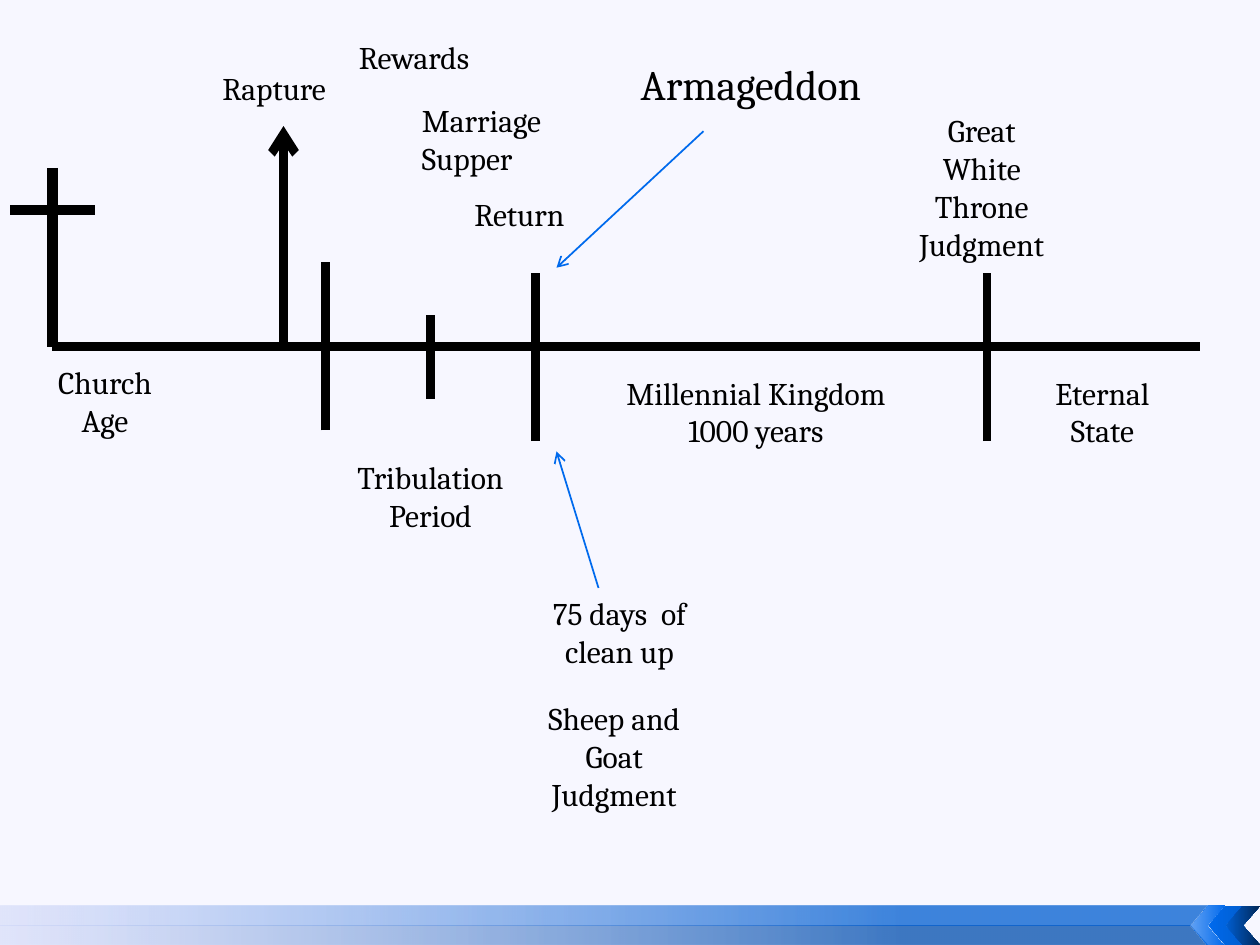
from dataclasses import dataclass
from pptx import Presentation
from pptx.dml.color import RGBColor
from pptx.enum.shapes import MSO_CONNECTOR, MSO_SHAPE
from pptx.enum.text import MSO_AUTO_SIZE, PP_ALIGN
from pptx.oxml import parse_xml
from pptx.oxml.ns import nsdecls, qn
from pptx.oxml.xmlchemy import OxmlElement
from pptx.util import Inches, Pt


@dataclass(frozen=True)
class Theme:
    back: str = "F7F7FF"
    ink: str = "000000"
    blue: str = "006AED"
    mid: str = "005ED1"
    deep: str = "004EAF"
    dark: str = "002757"
    pale: str = "CCD4F8"
    font: str = "Cambria"
    body: int = 18
    large: int = 24
    thin: int = 1
    thick: int = 5
    cross: int = 6


LOOK = Theme()
COLS, ROWS = 120, 90
AXIS = 33
FOOT = 86.28
LEFT, MID = PP_ALIGN.LEFT, PP_ALIGN.CENTER


def unit(num):
    return Inches(num / 12)


def apply(item, form):
    for key, val in form.items():
        setattr(item, key, val)


def rgb(code):
    return RGBColor.from_string(code)


def draw_line(slide, start, end, width=LOOK.thick, color=LOOK.ink, head=False):
    ends = [unit(num) for num in (*start, *end)]
    line = slide.shapes.add_connector(MSO_CONNECTOR.STRAIGHT, *ends)
    line.line.width = Pt(width)
    line.line.color.rgb = rgb(color)
    if head:
        tip = OxmlElement("a:tailEnd")
        tip.set("type", "arrow")
        line.line._get_or_add_ln().append(tip)
    line._element.spPr.append(OxmlElement("a:effectLst"))


def add_label(slide, text, left, top, width, height, align=MID, size=LOOK.body):
    box = slide.shapes.add_textbox(*map(unit, (left, top, width, height)))
    frame = box.text_frame
    frame.text = text
    apply(frame, {"word_wrap": True, "auto_size": MSO_AUTO_SIZE.SHAPE_TO_FIT_TEXT})
    for para in frame.paragraphs:
        para.alignment = align
        apply(para.font, {"name": LOOK.font, "size": Pt(size)})
        para.font.color.rgb = rgb(LOOK.ink)


def fill_fade(shape, stops):
    marks = "".join(
        f'<a:gs pos="{pos * 1000}"><a:srgbClr val="{color}">'
        f'<a:alpha val="{alpha * 1000}"/></a:srgbClr></a:gs>'
        for pos, color, alpha in stops
    )
    fade = parse_xml(
        f'<a:gradFill {nsdecls("a")} rotWithShape="1"><a:gsLst>{marks}</a:gsLst>'
        '<a:lin ang="10800000" scaled="0"/></a:gradFill>'
    )
    shape.shadow.inherit = False
    shape.fill.background()
    shape.line.fill.background()
    props = shape._element.spPr
    props.replace(props.find(qn("a:noFill")), fade)


def add_band(slide, edge, color):
    half = (FOOT + ROWS) / 2
    spots = [(115, edge), (0, edge), (0, half), (113.3, half)]
    spots = [(unit(col), unit(row)) for col, row in spots]
    form = slide.shapes.build_freeform(*spots[0])
    form.add_line_segments(spots[1:], close=True)
    fill_fade(form.convert_to_shape(), [(25, color, 75), (100, LOOK.pale, 50)])


def add_footer(slide):
    add_band(slide, ROWS, LOOK.deep)
    add_band(slide, FOOT, LOOK.mid)
    shades = [LOOK.blue, LOOK.blue, LOOK.mid, LOOK.dark]
    wide, step = 3.24, 1.68
    first = COLS - wide - 2 * step
    for idx, (near, far) in enumerate(zip(shades, shades[1:])):
        place = (first + idx * step, FOOT, wide, ROWS - FOOT)
        mark = slide.shapes.add_shape(MSO_SHAPE.CHEVRON, *map(unit, place))
        mark._element.spPr.xfrm.set("flipH", "1")
        fill_fade(mark, [(0, near, 100 if idx else 60), (100, far, 100)])


def add_axis(slide):
    draw_line(slide, (5, AXIS), (114.25, AXIS))
    for col, top, low in [(31, 25, 41), (51, 26, 42), (41, 30, 38), (94, 26, 42)]:
        draw_line(slide, (col, low), (col, top))
    draw_line(slide, (27, AXIS), (27, 12), head=True)
    draw_line(slide, (5, 16), (5, AXIS), LOOK.cross)
    draw_line(slide, (9, 20), (1, 20), LOOK.cross)
    for start, end in [((57, 56), (53, 43)), ((67, 12.5), (53, 25.5))]:
        draw_line(slide, start, end, LOOK.thin, LOOK.blue, True)


def add_labels(slide):
    one, two = 4.8, 8.5
    for label in [
        ("Church\nAge", 4, 34, 12, two),
        ("Rapture", 20, 6, 13, one, LEFT),
        ("Tribulation\nPeriod", 32, 43, 18, two),
        ("Millennial Kingdom\n1000 years", 56, 35, 32, two),
        ("Eternal\nState", 99, 35, 12, two),
        ("75 days  of clean up", 50, 56, 18, two),
        ("Rewards", 33, 3, 15, one, LEFT),
        ("Marriage Supper", 39, 9, 15, two, LEFT),
        ("Return", 44, 18, 15, one, LEFT),
        ("Sheep and Goat Judgment", 51, 66, 15, 12.1),
        ("Great White Throne Judgment", 86, 10, 15, 15.7),
        ("Armageddon", 58, 5, 27, 6, MID, LOOK.large),
    ]:
        add_label(slide, *label)


def main():
    deck = Presentation()
    apply(deck, {"slide_width": unit(COLS), "slide_height": unit(ROWS)})
    slide = deck.slides.add_slide(deck.slide_layouts[6])
    slide.background.fill.solid()
    slide.background.fill.fore_color.rgb = rgb(LOOK.back)
    add_footer(slide)
    add_axis(slide)
    add_labels(slide)
    deck.save("out.pptx")


if __name__ == "__main__":
    main()
